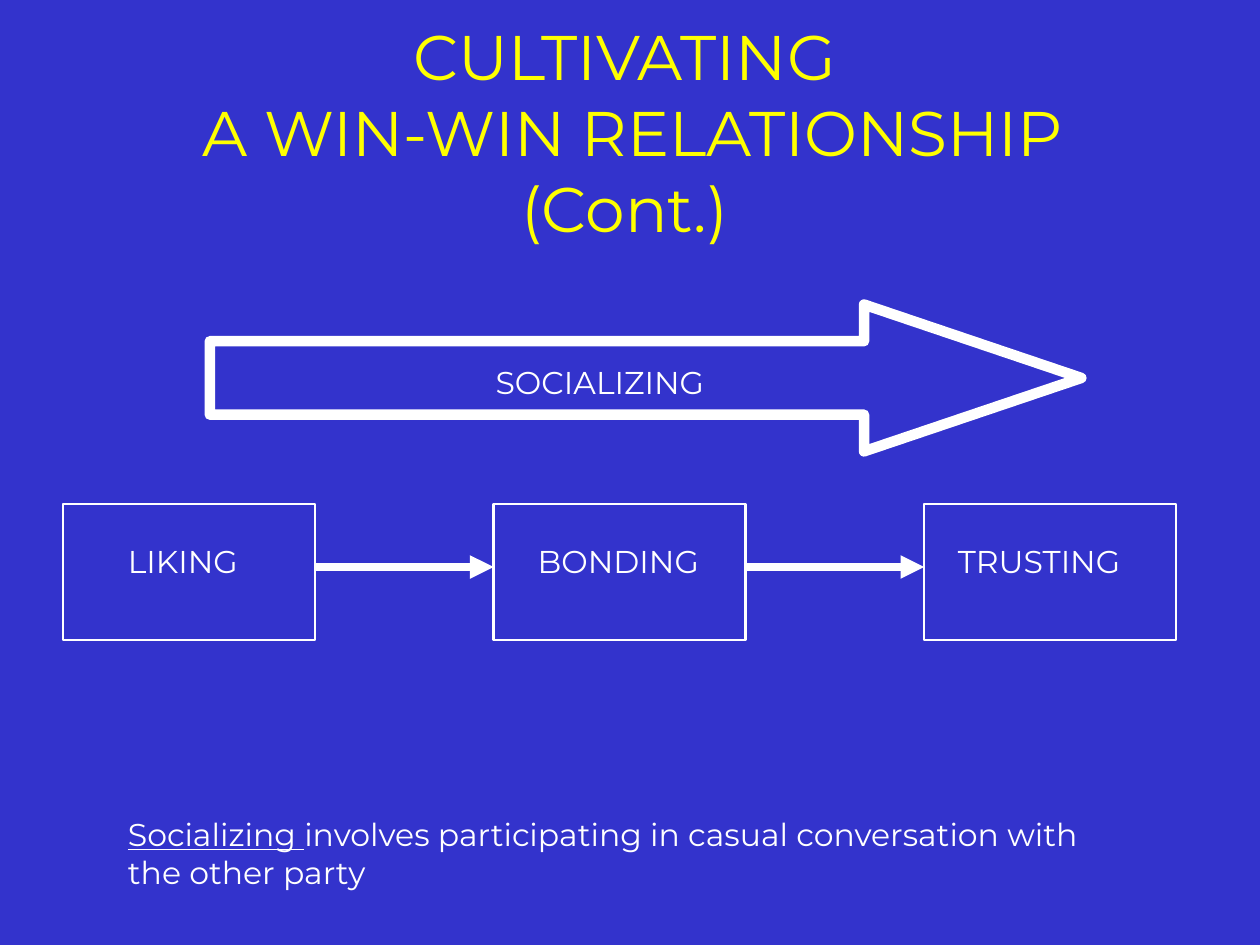
"""Build the slide on cultivating a win-win relationship."""
from lxml import etree
from pptx import Presentation
from pptx.dml.color import RGBColor
from pptx.enum.shapes import MSO_CONNECTOR, MSO_SHAPE
from pptx.enum.text import MSO_ANCHOR, MSO_AUTO_SIZE, PP_ALIGN
from pptx.oxml.ns import qn
from pptx.util import Cm, Pt

STRAIGHT = MSO_CONNECTOR.STRAIGHT
RECT, ARROW = MSO_SHAPE.RECTANGLE, MSO_SHAPE.RIGHT_ARROW
TOP, MIDDLE = MSO_ANCHOR.TOP, MSO_ANCHOR.MIDDLE
LEFT, CENTER = PP_ALIGN.LEFT, PP_ALIGN.CENTER
FIXED = MSO_AUTO_SIZE.NONE

BLUE = RGBColor(0x33, 0x33, 0xCC)
YELLOW = RGBColor(0xFF, 0xFF, 0x00)
WHITE = RGBColor(0xFF, 0xFF, 0xFF)

TITLE = ["CULTIVATING", " A WIN-WIN RELATIONSHIP (Cont.)"]
TITLE_AT = (1.91, 0.84, 21.36, 3.61)
STAGES = [("LIKING", 1.06, 3.02), ("BONDING", 0.64, 3.86), ("TRUSTING", 0.43, 4.22)]
STAGE_LEFT, STAGE_TOP, STAGE_W, STAGE_H, STAGE_STEP = 1.27, 10.16, 5.08, 2.74, 8.68
LINK_Y, LABEL_TOP, LABEL_H = 11.43, 10.8, 1.02
ARROW_AT = (4.23, 6.14, 17.57, 2.96)
ARROW_LABEL, ARROW_LABEL_AT = "SOCIALIZING", (9.74, 7.2, 5.72, LABEL_H)
NOTE = [("Socializing ", True),
        ("involves participating in casual conversation with the other party", False)]
NOTE_AT = (2.33, 16.3, 20.53, 1.78)

TITLE_FONT = {"name": "Montserrat", "size": Pt(36)}
BODY_FONT = {"name": "Montserrat", "size": Pt(18)}


def write(shape, paragraphs, font, color, align=LEFT, anchor=TOP, wrap=True):
    tf = shape.text_frame
    for key, value in {"word_wrap": wrap, "auto_size": FIXED, "vertical_anchor": anchor}.items():
        setattr(tf, key, value)
    for i, runs in enumerate(paragraphs):
        p = tf.add_paragraph() if i else tf.paragraphs[0]
        p.alignment = align
        for text, underline in runs:
            r = p.add_run()
            r.text = text
            for key, value in {**font, "underline": underline}.items():
                setattr(r.font, key, value)
            r.font.color.rgb = color


def add_label(s, at, runs):
    write(s.shapes.add_textbox(*map(Cm, at)), [runs], BODY_FONT, WHITE)


def add_outline(s, kind, at, width):
    sp = s.shapes.add_shape(kind, *map(Cm, at))
    sp.shadow.inherit = False
    sp.fill.background()
    sp.line.color.rgb = WHITE
    sp.line.width = Pt(width)
    return sp


def add_link(s, start, end):
    c = s.shapes.add_connector(STRAIGHT, Cm(start), Cm(LINK_Y), Cm(end), Cm(LINK_Y))
    c.line.color.rgb = WHITE
    c.line.width = Pt(4.5)
    etree.SubElement(c.line._get_or_add_ln(), qn("a:tailEnd"), type="triangle")
    etree.SubElement(c._element.spPr, qn("a:effectLst"))


def main():
    prs = Presentation()
    prs.slide_width, prs.slide_height = Cm(25.4), Cm(19.05)
    s = prs.slides.add_slide(prs.slide_layouts[5])
    s.background.fill.solid()
    s.background.fill.fore_color.rgb = BLUE

    title = s.shapes.title
    for key, value in zip(("left", "top", "width", "height"), TITLE_AT):
        setattr(title, key, Cm(value))
    write(title, [[(line, False)] for line in TITLE], TITLE_FONT, YELLOW, CENTER, MIDDLE, False)

    for i, (name, inset, width) in enumerate(STAGES):
        left = STAGE_LEFT + i * STAGE_STEP
        add_outline(s, RECT, (left, STAGE_TOP, STAGE_W, STAGE_H), 1.5)
        add_label(s, (left + inset, LABEL_TOP, width, LABEL_H), [(name, False)])
        if i:
            add_link(s, left - STAGE_STEP + STAGE_W, left)

    arrow = add_outline(s, ARROW, ARROW_AT, 6)
    arrow.adjustments[0], arrow.adjustments[1] = 0.5, 1.48
    add_label(s, ARROW_LABEL_AT, [(ARROW_LABEL, False)])
    add_label(s, NOTE_AT, NOTE)
    prs.save("out.pptx")


if __name__ == "__main__":
    main()
